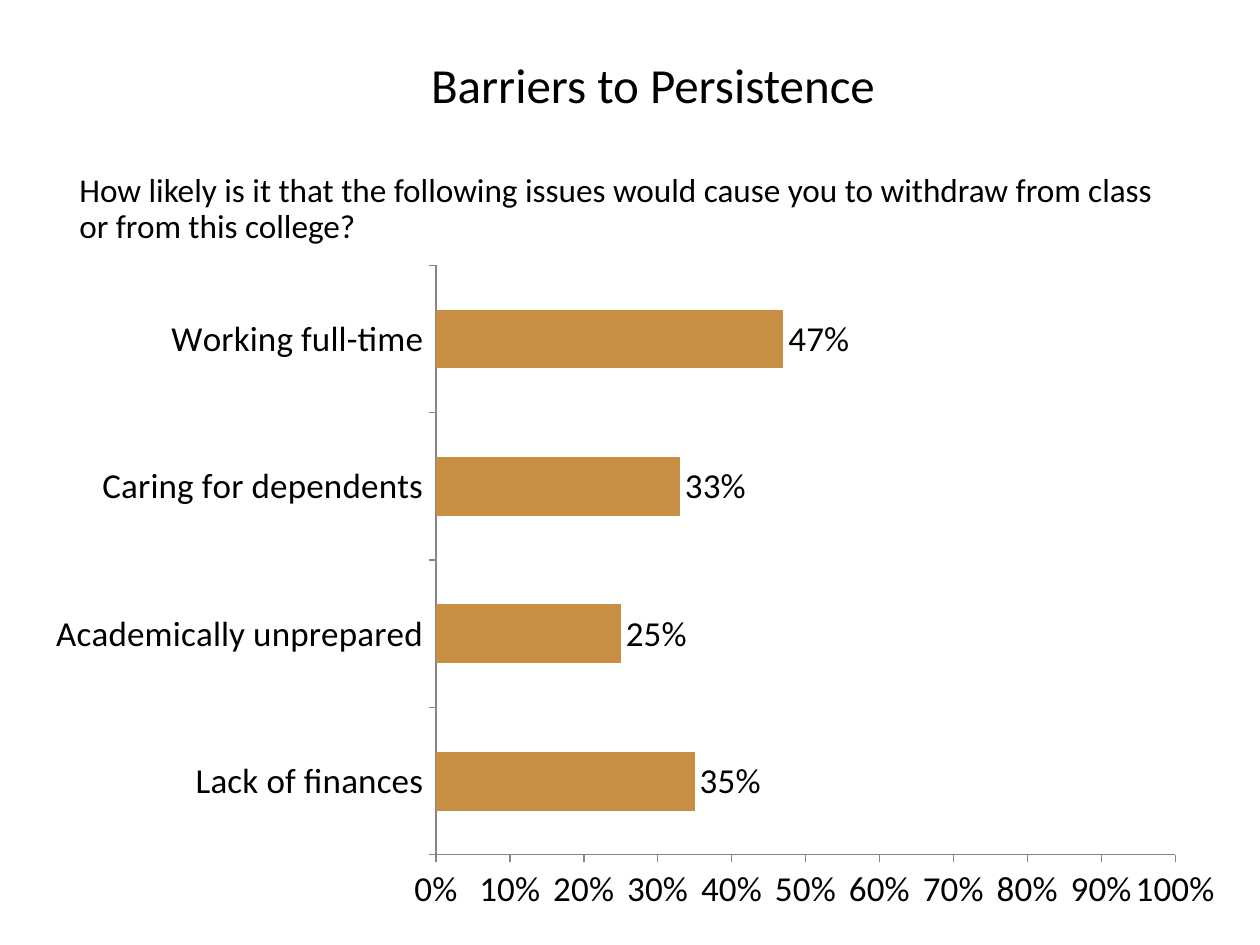
"""Build the Barriers to Persistence slide with its bar chart."""
from dataclasses import dataclass

import pptx
import pptx.chart.data
import pptx.dml.color
import pptx.enum.chart
import pptx.enum.text
import pptx.util

PX = 914400 / 126
FONT = "Calibri"
COLORS = {"text": "000000", "bar": "C78E44", "axis": "868686"}


@dataclass
class Box:
    x: int
    y: int
    w: int
    h: int

    def emu(self) -> list[int]:
        return [round(v * PX) for v in (self.x, self.y, self.w, self.h)]


@dataclass
class Label:
    text: str
    box: Box
    size: int
    align: pptx.enum.text.PP_ALIGN
    anchor: pptx.enum.text.MSO_ANCHOR
    space_before: float = 0


@dataclass
class Barrier:
    name: str
    share: float


LABELS = [
    Label("Barriers to Persistence", Box(199, 42, 908, 92), 28,
          pptx.enum.text.PP_ALIGN.CENTER, pptx.enum.text.MSO_ANCHOR.MIDDLE),
    Label("How likely is it that the following issues would cause you to "
          "withdraw from class or from this college?",
          Box(67, 168, 1134, 116), 19,
          pptx.enum.text.PP_ALIGN.LEFT, pptx.enum.text.MSO_ANCHOR.TOP, 7.5),
]
BARRIERS = [
    Barrier("Lack of finances", 0.35),
    Barrier("Academically unprepared", 0.25),
    Barrier("Caring for dependents", 0.33),
    Barrier("Working full-time", 0.47),
]
CHART_BOX = Box(32, 252, 1207, 672)


def rgb(name: str) -> pptx.dml.color.RGBColor:
    return pptx.dml.color.RGBColor.from_string(COLORS[name])


def style_font(font, size: int) -> None:
    font.name = FONT
    font.size = pptx.util.Pt(size)
    font.bold = False
    font.color.rgb = rgb("text")


def add_label(s, label: Label) -> None:
    tf = s.shapes.add_textbox(*label.box.emu()).text_frame
    tf.word_wrap = True
    tf.vertical_anchor = label.anchor
    p = tf.paragraphs[0]
    p.text = label.text
    p.alignment = label.align
    p.line_spacing = 0.9
    p.space_before = pptx.util.Pt(label.space_before)
    style_font(p.runs[0].font, label.size)


def style_axis(axis) -> None:
    axis.has_major_gridlines = False
    axis.major_tick_mark = pptx.enum.chart.XL_TICK_MARK.OUTSIDE
    axis.minor_tick_mark = pptx.enum.chart.XL_TICK_MARK.NONE
    axis.format.line.color.rgb = rgb("axis")
    axis.format.line.width = pptx.util.Pt(0.75)
    style_font(axis.tick_labels.font, 20)


def add_barrier_chart(s, barriers: list[Barrier], box: Box) -> None:
    data = pptx.chart.data.CategoryChartData(number_format="0%")
    data.categories = [b.name for b in barriers]
    data.add_series("Series 1", [b.share for b in barriers])
    kind = pptx.enum.chart.XL_CHART_TYPE.BAR_CLUSTERED
    chart = s.shapes.add_chart(kind, *box.emu(), data).chart
    chart.has_title = False
    chart.has_legend = False
    style_font(chart.font, 20)
    style_axis(chart.category_axis)
    style_axis(chart.value_axis)
    chart.value_axis.minimum_scale = 0
    chart.value_axis.maximum_scale = 1
    chart.value_axis.major_unit = 0.1
    chart.value_axis.tick_labels.number_format = "0%"
    chart.value_axis.tick_labels.number_format_is_linked = False

    plot = chart.plots[0]
    plot.gap_width = 150
    plot.vary_by_categories = False
    fill = plot.series[0].format.fill
    fill.solid()
    fill.fore_color.rgb = rgb("bar")
    plot.has_data_labels = True
    labels = plot.data_labels
    labels.show_value = True
    labels.number_format = "0%"
    labels.number_format_is_linked = False
    labels.position = pptx.enum.chart.XL_LABEL_POSITION.OUTSIDE_END
    style_font(labels.font, 20)


def main() -> None:
    prs = pptx.Presentation()
    prs.slide_width = pptx.util.Inches(10)
    prs.slide_height = pptx.util.Inches(7.5)
    s = prs.slides.add_slide(prs.slide_layouts[6])
    add_barrier_chart(s, BARRIERS, CHART_BOX)
    for label in LABELS:
        add_label(s, label)
    prs.save("out.pptx")


if __name__ == "__main__":
    main()
